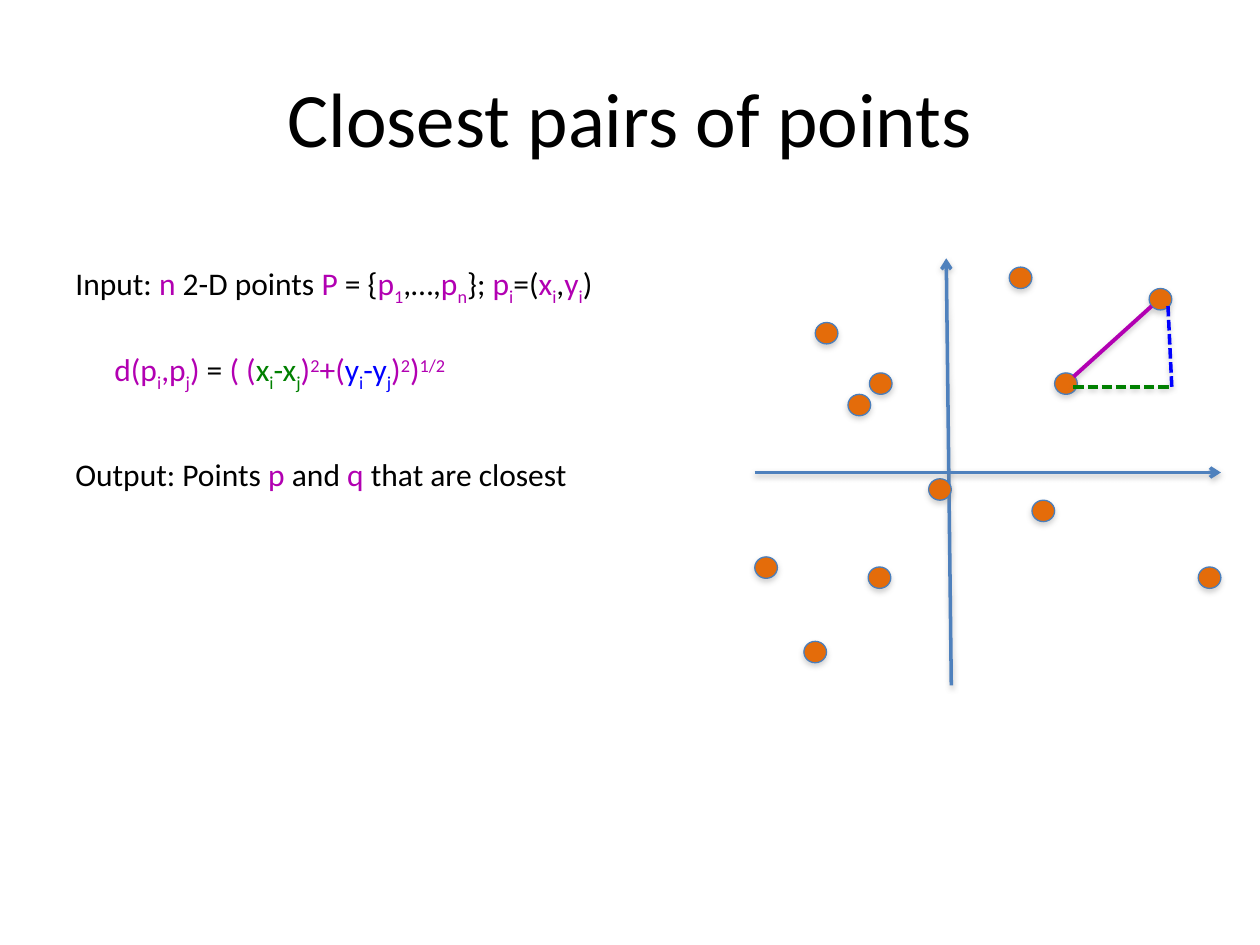
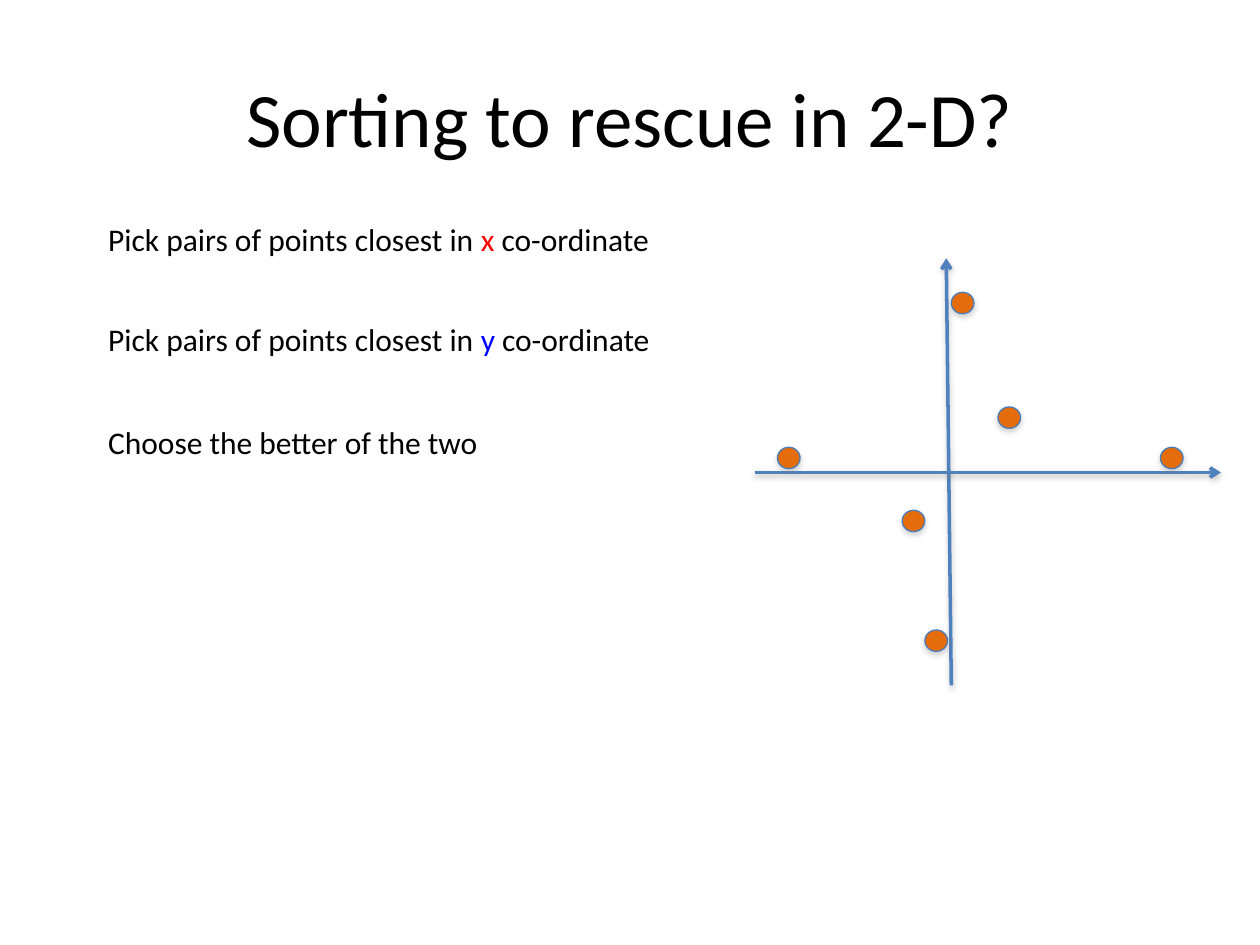
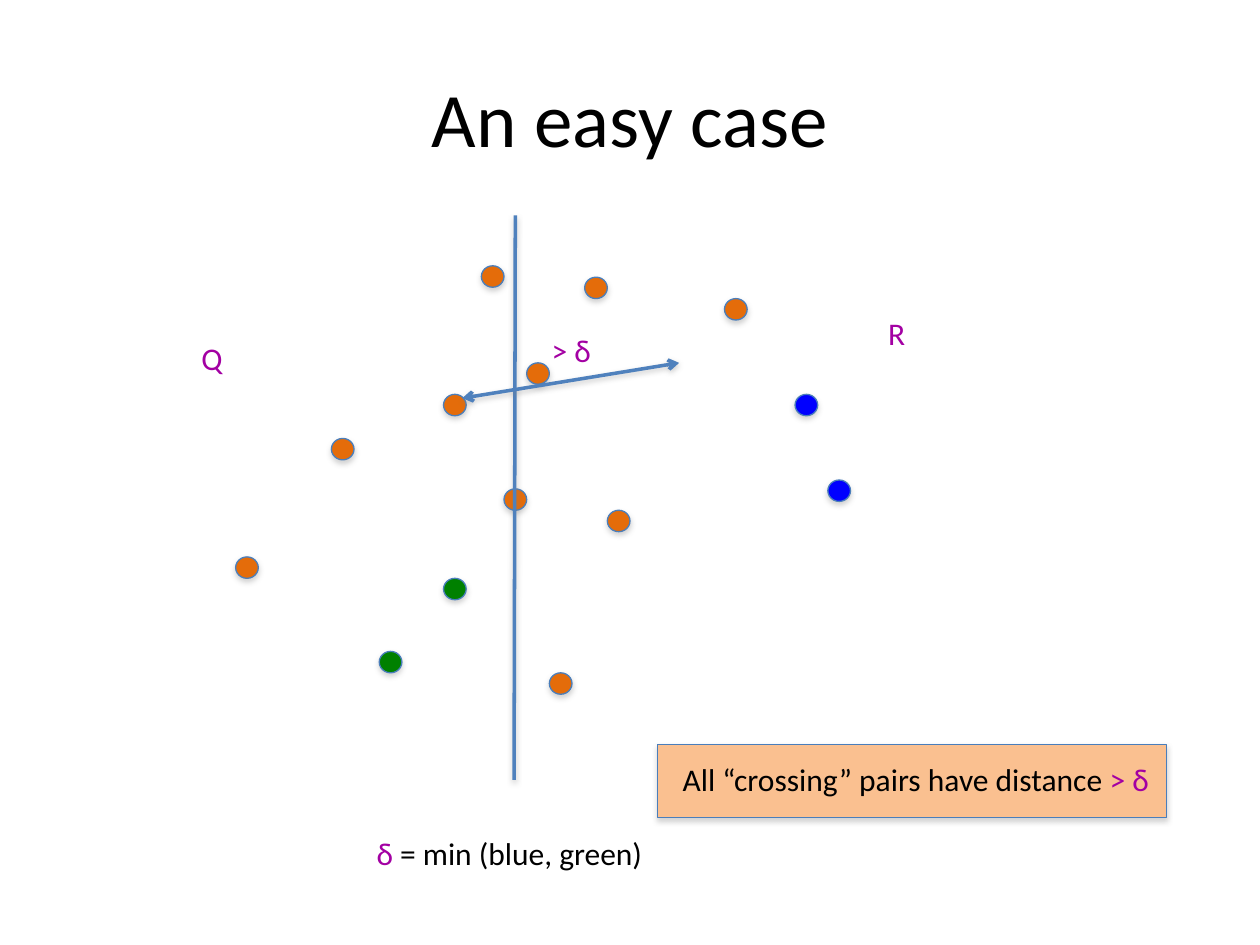
from lxml.etree import SubElement
from pptx import Presentation
from pptx.dml.color import RGBColor
from pptx.enum.dml import MSO_LINE
from pptx.enum.shapes import MSO_CONNECTOR, MSO_SHAPE
from pptx.enum.text import MSO_ANCHOR, MSO_AUTO_SIZE, PP_ALIGN
from pptx.oxml import parse_xml
from pptx.oxml.ns import nsdecls, qn
from pptx.util import Inches, Pt

# Shared style
BLACK = RGBColor(0x00, 0x00, 0x00)
RED = RGBColor(0xFF, 0x00, 0x00)
GREEN = RGBColor(0x00, 0x80, 0x00)
BLUE = RGBColor(0x00, 0x00, 0xFF)
MAGENTA = RGBColor(0xB2, 0x00, 0xB2)
PURPLE = RGBColor(0xA3, 0x00, 0xA3)
ORANGE = RGBColor(0xE4, 0x6C, 0x0A)
PEACH = RGBColor(0xFA, 0xC0, 0x90)
AXIS_BLUE = RGBColor(0x4F, 0x81, 0xBD)
EDGE_BLUE = RGBColor(0x4A, 0x7E, 0xBB)
SHADOW_GREY = RGBColor(0x80, 0x80, 0x80)
FONT = "Calibri"
TITLE_SIZE, TEXT_SIZE = 44, 18
LINE_HEIGHT = 0.4
DOT_SIZE = (0.18, 0.17)
SUB, SUPER = -25, 30


# Runs are (text, colour, baseline shift in percent, outline colour)
def plain(text, color=BLACK, shift=0, outline=None):
    return text, color, shift, outline


def indexed(name, index, color=MAGENTA):
    return [plain(name, color), plain(index, color, SUB)]


def squared_gap(axis, color):
    return [*indexed(axis, "i", color), *indexed(f"-{axis}", "j", color),
            plain(")", MAGENTA), plain("2", MAGENTA, SUPER)]


# Slide 1: texts are (left, top, width, runs), dots are (left, top)
PAIRS_TITLE = "Closest pairs of points"
PAIRS_TEXTS = [
    (0.5, 2.05, 4.41, [
        plain("Input: "), plain("n", MAGENTA), plain(" 2-D points "),
        plain("P", MAGENTA), plain(" = {"), *indexed("p", "1"), plain(",…,"),
        *indexed("p", "n"), plain("}; "), *indexed("p", "i"), plain("=("),
        *indexed("x", "i"), plain(","), *indexed("y", "i"), plain(")")]),
    (0.5, 3.56, 4.14, [
        plain("Output: Points "), plain("p", MAGENTA), plain(" and "),
        plain("q", MAGENTA), plain(" that are closest")]),
    (0.81, 2.73, 2.94, [
        *indexed("d(p", "i"), *indexed(",p", "j"), plain(") ", MAGENTA),
        plain("= "), plain("( (", MAGENTA), *squared_gap("x", GREEN),
        plain("+(", MAGENTA), *squared_gap("y", BLUE),
        plain(")", MAGENTA), plain("1/2", MAGENTA, SUPER)]),
]
PAIRS_DOTS = [(6.47, 2.56), (6.73, 3.13), (9.12, 2.29), (8.37, 2.96),
              (6.9, 2.96), (5.99, 4.42), (6.89, 4.5), (7.37, 3.8),
              (6.38, 5.09), (8.01, 2.12), (8.19, 3.97), (9.51, 4.5)]
NEAR, CORNER, FAR = (8.52, 3.07), (9.3, 3.07), (9.27, 2.43)
DISTANCE_START, DISTANCE_END = (8.52, 2.99), (9.14, 2.43)

# Slide 2
SORT_TITLE = "Sorting to rescue in 2-D?"
SORT_TEXTS = [
    *[(0.76, top, 4.56, [plain("Pick pairs of points closest in "),
                         plain(axis, color), plain(" co-ordinate")])
      for top, axis, color in [(1.7, "x", RED), (2.49, "y", BLUE)]],
    (0.76, 3.31, 3.17, [plain("Choose the better of the two")]),
]
SORT_DOTS = [(6.17, 3.55), (7.34, 5), (7.92, 3.23), (7.55, 2.32),
             (7.16, 4.05), (9.21, 3.55)]

# Both plots have the same axes, each ending in an arrow
AXES = [((7.55, 5.44), (7.51, 2.05)), ((5.99, 3.75), (9.69, 3.75))]

# Slide 3
EASY_TITLE = "An easy case"
EASY_DOTS = {
    ORANGE: [(3.82, 2.11), (2.63, 3.48), (5.75, 2.37), (4.18, 2.88),
             (3.52, 3.13), (1.87, 4.42), (4, 3.88), (4.64, 2.2),
             (4.82, 4.05), (4.36, 5.34)],
    GREEN: [(3.52, 4.59), (3.01, 5.17)],
    BLUE: [(6.31, 3.13), (6.57, 3.81)],
}
DELTA_TEXT = (2.89, 6.57, 2.33, [
    plain("δ", PURPLE), plain(" = min ("), plain("blue", outline=BLUE),
    plain(", "), plain("green", outline=GREEN), plain(")")])
DIVIDER = ((4.09, 1.71), (4.08, 6.19))
HALF_LABELS = [(1.5, 2.64, 0.37, [plain("Q", PURPLE)]),
               (6.95, 2.44, 0.34, [plain("R", PURPLE)])]
CROSSING = ((3.67, 3.16), (5.39, 2.88))
CROSSING_LABEL = (4.28, 2.58, 0.52, [plain("> δ", PURPLE)])
CLAIM_BOX = (5.22, 5.91, 4.04, 0.58)
CLAIM_TEXT = (5.32, 5.98, 3.94, [
    plain("All “crossing” pairs have distance "), plain("> δ", PURPLE)])


def inches(*lengths):
    return [Inches(length) for length in lengths]


def cast_shadow(part, opacity, distance):
    part._element.spPr.append(parse_xml(
        f'<a:effectLst {nsdecls("a")}>'
        f'<a:outerShdw blurRad="{Pt(3.1)}" dist="{Pt(distance)}" '
        f'dir="5400000" rotWithShape="0"><a:srgbClr val="{SHADOW_GREY}">'
        f'<a:alpha val="{opacity * 1000}"/></a:srgbClr>'
        '</a:outerShdw></a:effectLst>'))


def style_run(run, size, color):
    run.font.name = FONT
    run.font.size = Pt(size)
    run.font.color.rgb = color


def add_text(shapes, left, top, width, runs):
    frame = shapes.add_textbox(*inches(left, top, width, LINE_HEIGHT)).text_frame
    frame.word_wrap = False
    frame.auto_size = MSO_AUTO_SIZE.SHAPE_TO_FIT_TEXT
    for text, color, shift, outline in runs:
        run = frame.paragraphs[0].add_run()
        run.text = text
        style_run(run, TEXT_SIZE, color)
        props = run._r.get_or_add_rPr()
        if shift:
            props.set("baseline", str(shift * 1000))
        if outline is not None:
            props.insert(0, parse_xml(
                f'<a:ln {nsdecls("a")} w="{Pt(0.75)}"><a:solidFill>'
                f'<a:srgbClr val="{outline}"/></a:solidFill></a:ln>'))


def add_filled(shapes, kind, box, fill):
    part = shapes.add_shape(kind, *inches(*box))
    part.fill.solid()
    part.fill.fore_color.rgb = fill
    part.line.color.rgb = EDGE_BLUE
    part.line.width = Pt(0.75)
    cast_shadow(part, 35, 1.8)


def add_dots(shapes, places, fill=ORANGE):
    for place in places:
        add_filled(shapes, MSO_SHAPE.OVAL, (*place, *DOT_SIZE), fill)


def add_line(shapes, start, end, color=AXIS_BLUE, width=2, dash=None, arrows=()):
    line = shapes.add_connector(MSO_CONNECTOR.STRAIGHT, *inches(*start, *end))
    line.line.color.rgb = color
    line.line.width = Pt(width)
    if dash:
        line.line.dash_style = dash
    for arrow_end in arrows:
        SubElement(line.line._get_or_add_ln(), qn(f"a:{arrow_end}"), type="arrow")
    cast_shadow(line, 38, 1.6)


def add_slide(deck, heading):
    slide = deck.slides.add_slide(deck.slide_layouts[5])
    title = slide.shapes.title
    title.left, title.top, title.width, title.height = inches(0.5, 0.3, 9, 1.25)
    title.text_frame.vertical_anchor = MSO_ANCHOR.MIDDLE
    paragraph = title.text_frame.paragraphs[0]
    paragraph.alignment = PP_ALIGN.CENTER
    run = paragraph.add_run()
    run.text = heading
    style_run(run, TITLE_SIZE, BLACK)
    return slide.shapes


def add_plot_slide(deck, heading, texts, dots):
    shapes = add_slide(deck, heading)
    for text in texts:
        add_text(shapes, *text)
    for start, end in AXES:
        add_line(shapes, start, end, arrows=["tailEnd"])
    add_dots(shapes, dots)
    return shapes


def add_easy_slide(deck):
    shapes = add_slide(deck, EASY_TITLE)
    for fill, places in EASY_DOTS.items():
        add_dots(shapes, places, fill)
    add_text(shapes, *DELTA_TEXT)

    # Dividing line with its two halves
    halves = shapes.add_group_shape().shapes
    add_line(halves, *DIVIDER)
    for label in HALF_LABELS:
        add_text(halves, *label)

    # Distance across the divider
    crossing = shapes.add_group_shape().shapes
    add_line(crossing, *CROSSING, arrows=["headEnd", "tailEnd"])
    add_text(crossing, *CROSSING_LABEL)

    # Claim
    claim = shapes.add_group_shape().shapes
    add_filled(claim, MSO_SHAPE.RECTANGLE, CLAIM_BOX, PEACH)
    add_text(claim, *CLAIM_TEXT)


def main():
    deck = Presentation()
    deck.slide_width, deck.slide_height = inches(10, 7.5)

    # Distance triangle on the first plot
    pairs = add_plot_slide(deck, PAIRS_TITLE, PAIRS_TEXTS, PAIRS_DOTS)
    triangle = pairs.add_group_shape().shapes
    add_line(triangle, DISTANCE_START, DISTANCE_END, MAGENTA, 2.25)
    add_line(triangle, NEAR, CORNER, GREEN, dash=MSO_LINE.SQUARE_DOT)
    add_line(triangle, CORNER, FAR, BLUE, dash=MSO_LINE.SQUARE_DOT)

    add_plot_slide(deck, SORT_TITLE, SORT_TEXTS, SORT_DOTS)
    add_easy_slide(deck)
    deck.save("out.pptx")


if __name__ == "__main__":
    main()
